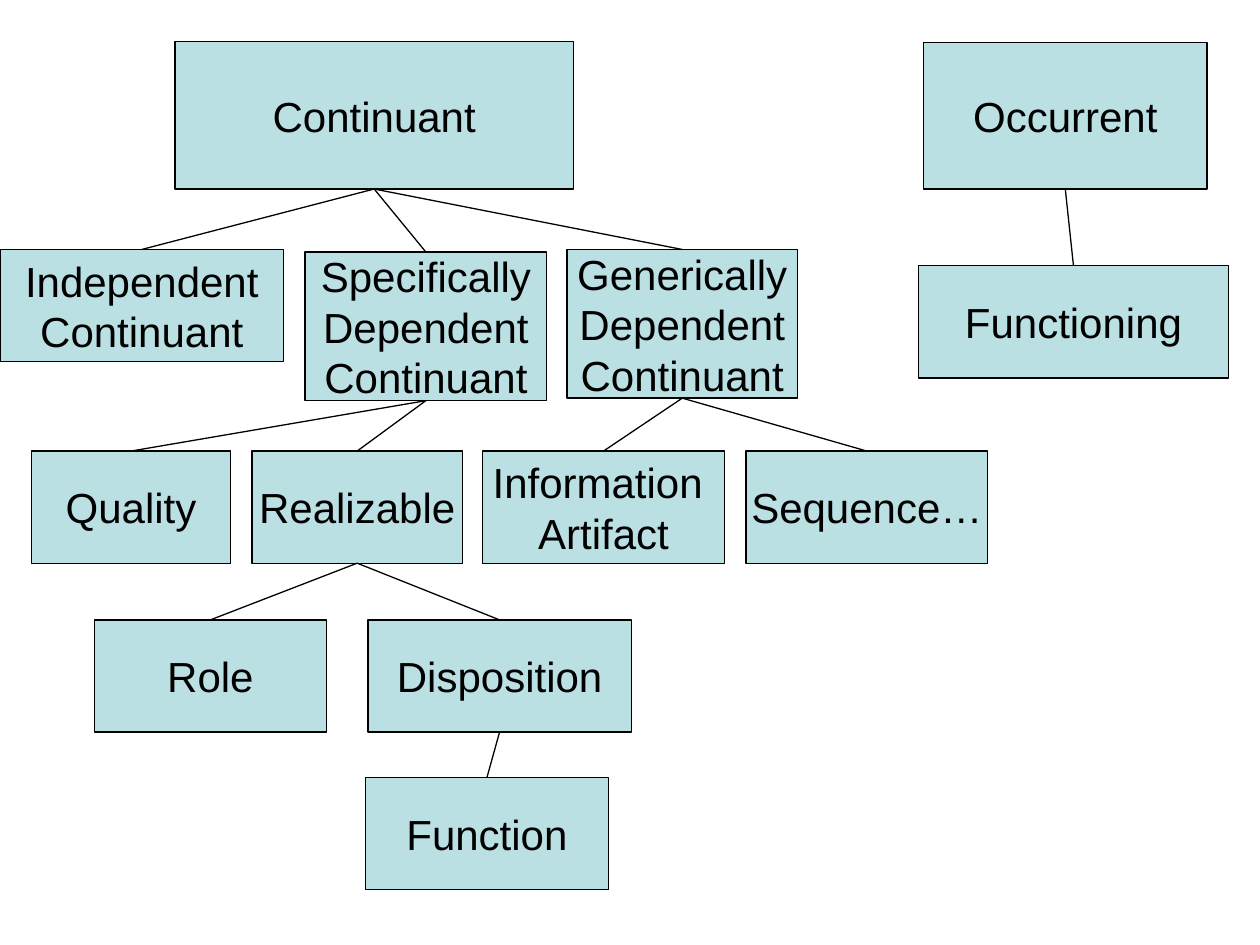
from pptx import Presentation
from pptx.dml.color import RGBColor
from pptx.enum.shapes import MSO_CONNECTOR as CONN, MSO_SHAPE as SHAPE
from pptx.enum.text import MSO_ANCHOR as ANCHOR, PP_ALIGN as ALIGN
from pptx.oxml.ns import qn
from pptx.util import Inches, Pt
from lxml.etree import SubElement

COLORS = {"fill": "BBE0E3", "ink": "000000"}
COLS, ROWS = 100, 75
BOTTOM, TOP = 2, 0
LOW = 8.9

CONTINUANT_TREE = [
    ("Continuant", None, (13.9, 0, 31.6, 11.7)),
    ("Independent\nContinuant", "Continuant", (0, 16.5, 22.5, LOW)),
    ("Specifically\nDependent\nContinuant", "Continuant", (24.2, 16.7, 19.2, 11.8)),
    ("Generically\nDependent\nContinuant", "Continuant", (45, 16.5, 18.3, 11.8)),
    ("Quality", "Specifically\nDependent\nContinuant", (2.5, 32.5, 15.8, LOW)),
    ("Realizable", "Specifically\nDependent\nContinuant", (20, 32.5, 16.7, LOW)),
    ("Information \nArtifact", "Generically\nDependent\nContinuant", (38.3, 32.5, 19.2, LOW)),
    ("Sequence…", "Generically\nDependent\nContinuant", (59.2, 32.5, 19.2, LOW)),
    ("Role", "Realizable", (7.5, 45.9, 18.4, LOW)),
    ("Disposition", "Realizable", (29.2, 45.9, 20.9, LOW)),
    ("Function", "Disposition", (29, 58.4, 19.3, LOW)),
]
OCCURRENT_TREE = [
    ("Occurrent", None, (0.4, 0, 22.5, 11.6)),
    ("Functioning", "Occurrent", (0, 17.7, 24.6, LOW)),
]


def color(name):
    return RGBColor.from_string(COLORS[name])


def add_node(s, text, x, y, w, h):
    sp = s.shapes.add_shape(SHAPE.RECTANGLE, x, y, w, h)
    sp.shadow.inherit = False
    sp.fill.solid()
    sp.fill.fore_color.rgb = color("fill")
    sp.line.color.rgb = color("ink")
    sp.line.width = Pt(0.75)
    tf = sp.text_frame
    tf.word_wrap = False
    tf.vertical_anchor = ANCHOR.MIDDLE
    for i, line in enumerate(text.split("\n")):
        p = tf.add_paragraph() if i else tf.paragraphs[0]
        p.alignment = ALIGN.CENTER
        r = p.add_run()
        r.text = line
        r.font.name = "Arial"
        r.font.size = Pt(24)
        r.font.color.rgb = color("ink")
    return sp


def add_branch(s, parent, child):
    line = s.shapes.add_connector(CONN.STRAIGHT, 0, 0, 0, 0)
    line.begin_connect(parent, BOTTOM)
    line.end_connect(child, TOP)
    line.line.color.rgb = color("ink")
    line.line.width = Pt(0.75)
    SubElement(line._element.spPr, qn("a:effectLst"))


def add_tree(s, nodes, left, top, col, row):
    placed = {}
    for text, parent, (x, y, w, h) in nodes:
        placed[text] = add_node(s, text, int((left + x) * col), int((top + y) * row),
                                int(w * col), int(h * row))
        if parent:
            add_branch(s, placed[parent], placed[text])


def main():
    prs = Presentation()
    prs.slide_width, prs.slide_height = Inches(10), Inches(7.5)
    col, row = prs.slide_width / COLS, prs.slide_height / ROWS
    s = prs.slides.add_slide(prs.slide_layouts[6])
    add_tree(s, CONTINUANT_TREE, 0, 3.3, col, row)
    add_tree(s, OCCURRENT_TREE, 72.9, 3.4, col, row)
    prs.save("out.pptx")


if __name__ == "__main__":
    main()
